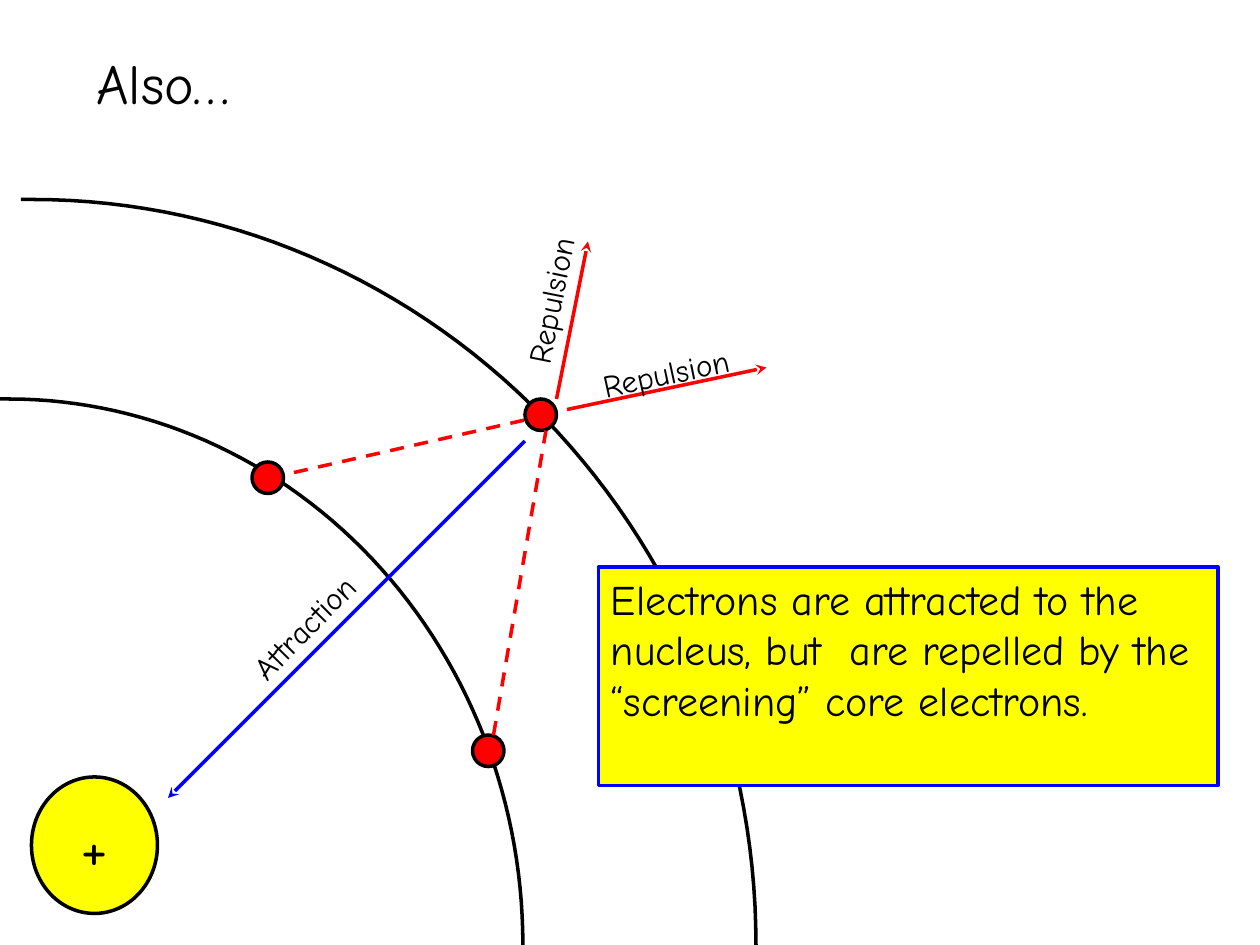
from math import cos, pi, sin

from lxml.etree import SubElement
from pptx import Presentation
from pptx.dml.color import RGBColor
from pptx.enum.dml import MSO_LINE
from pptx.enum.shapes import MSO_CONNECTOR, MSO_SHAPE
from pptx.enum.text import MSO_ANCHOR, PP_ALIGN
from pptx.oxml.ns import qn
from pptx.util import Inches, Pt

OVAL, RECT = MSO_SHAPE.OVAL, MSO_SHAPE.RECTANGLE
STRAIGHT, DASH = MSO_CONNECTOR.STRAIGHT, MSO_LINE.DASH
LEFT, MID = PP_ALIGN.LEFT, PP_ALIGN.CENTER
TOP, CENTRE = MSO_ANCHOR.TOP, MSO_ANCHOR.MIDDLE
FONT = "Comic Neue"
HUES = {"ink": "000000", "red": "FF0000", "blue": "0000FF", "sun": "FFFF00"}


def grid(*units):
    """Turn grid units, twelve to the inch, into lengths."""
    return [Inches(unit / 12) for unit in units]


def hue(name):
    """Look up a colour by name."""
    return RGBColor.from_string(HUES[name])


def stroke(line, name):
    """Draw a line two points wide in a named colour."""
    line.color.rgb = hue(name)
    line.width = Pt(2)


def write(shape, text, size=18, align=LEFT, anchor=TOP, wrap=True):
    """Set text in a shape."""
    frame = shape.text_frame
    frame.word_wrap = wrap
    frame.vertical_anchor = anchor
    para = frame.paragraphs[0]
    para.alignment = align
    run = para.add_run()
    run.text = text
    run.font.name = FONT
    run.font.size = Pt(size)
    run.font.color.rgb = hue("ink")


def label(slide, box, text, turn=0, **form):
    """Add a text box, turned by some degrees."""
    shape = slide.shapes.add_textbox(*grid(*box))
    shape.rotation = turn
    write(shape, text, **form)


def solid(slide, kind, box, fill, edge="ink"):
    """Add a filled and outlined shape."""
    shape = slide.shapes.add_shape(kind, *grid(*box))
    shape.shadow.inherit = False
    shape.fill.solid()
    shape.fill.fore_color.rgb = hue(fill)
    stroke(shape.line, edge)
    return shape


def shell(slide, start, mid, wide, high, steps=60):
    """Add a quarter orbit that ends at the foot of the slide."""
    turns = [pi / 2 * step / steps for step in range(steps + 1)]
    points = [grid(mid + wide * sin(turn), 90 - high * cos(turn)) for turn in turns]
    build = slide.shapes.build_freeform(*grid(start, 90 - high))
    build.add_line_segments(points, close=False)
    shape = build.convert_to_shape()
    shape.shadow.inherit = False
    shape.fill.background()
    stroke(shape.line, "ink")


def force(slide, ends, name, dash=False):
    """Add a dashed line or a solid arrow."""
    link = slide.shapes.add_connector(STRAIGHT, *grid(*ends))
    stroke(link.line, name)
    if dash:
        link.line.dash_style = DASH
    else:
        SubElement(link.line._get_or_add_ln(), qn("a:tailEnd"), type="stealth")
    SubElement(link._element.spPr, qn("a:effectLst"))


def main():
    """Build the slide and save it."""
    deck = Presentation()
    deck.slide_width, deck.slide_height = grid(120, 90)
    slide = deck.slides.add_slide(deck.slide_layouts[6])

    core = solid(slide, OVAL, (3, 74, 12, 13), "sun")
    write(core, "+", size=36, align=MID, anchor=CENTRE, wrap=False)
    shell(slide, 0, 0.8, 49, 52)
    shell(slide, 2, 3.1, 68.9, 71)
    for left, top in ((24, 44), (45, 70), (50, 38)):
        solid(slide, OVAL, (left, top, 3, 3), "red")

    force(slide, (50, 42, 16, 76), "blue")
    force(slide, (54, 39, 73, 35), "red")
    force(slide, (53, 38, 56, 23), "red")
    force(slide, (28, 45, 50, 40), "red", dash=True)
    force(slide, (47, 70, 52, 41), "red", dash=True)

    label(slide, (19.6, 52.6, 28, 4.8), "Attraction", turn=314.5)
    label(slide, (56, 32, 25, 4.8), "Repulsion", turn=347.7)
    label(slide, (40.9, 21.1, 25, 4.8), "Repulsion", turn=281.1)
    note = solid(slide, RECT, (57, 54, 59, 20.8), "sun", edge="blue")
    write(note, "Electrons are attracted to the nucleus, but  are repelled "
                "by the “screening” core electrons.", size=24)
    label(slide, (8, 4, 63, 7.6), "Also…", size=32)
    deck.save("out.pptx")


if __name__ == "__main__":
    main()
